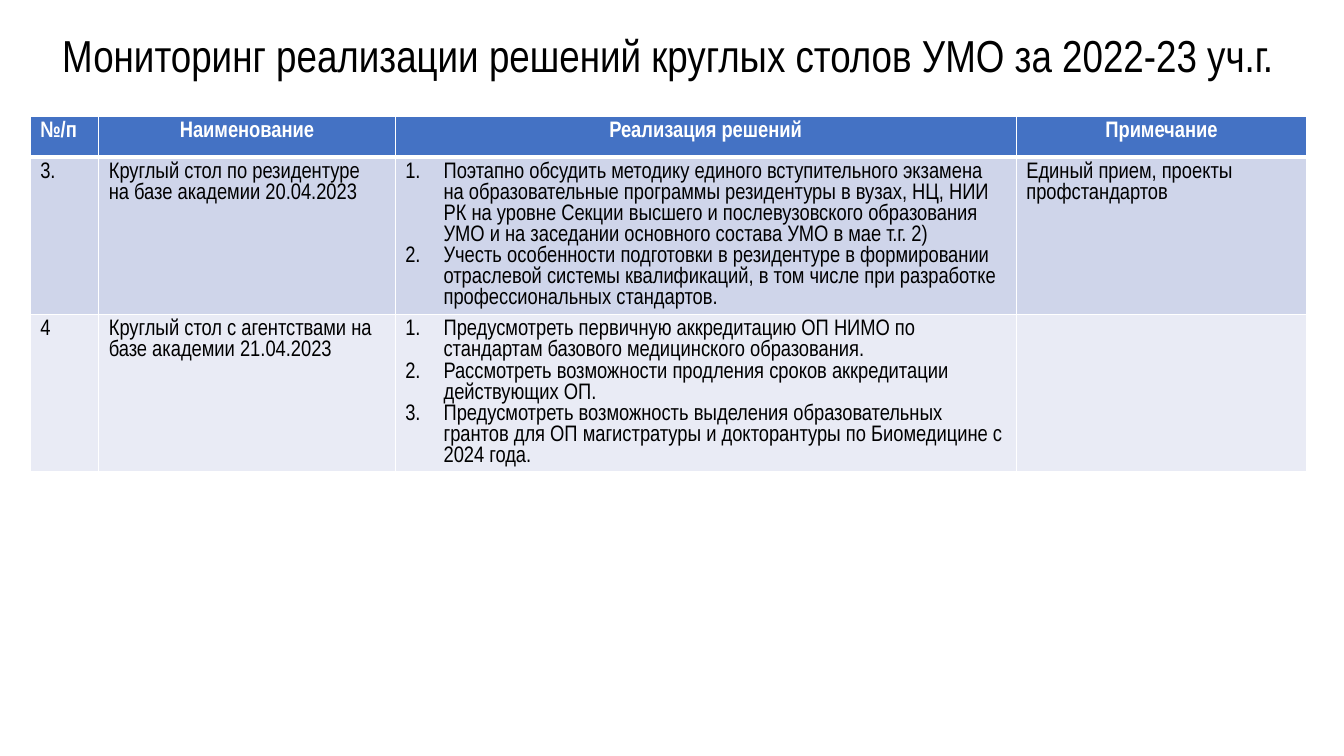
from dataclasses import dataclass

from pptx import Presentation
from pptx.dml.color import RGBColor
from pptx.enum import text
from pptx.oxml import parse_xml
from pptx.oxml.ns import nsdecls
from pptx.util import Inches, Pt

FONT = "Arial Narrow"
BLACK, WHITE = "000000", "FFFFFF"
LEFT, TABLE_TOP, WIDTH = 0.3, 1.15, 12.66
COLUMN_WIDTHS = (0.68, 2.94, 6.16, 2.88)
ROW_HEIGHT = 0.41
NUMBER_INDENT = 0.38


@dataclass
class RoundTable:
    number: str
    name: str
    decisions: tuple[str, ...]
    note: str
    fill: str


HEADERS = ("№/п", "Наименование", "Реализация решений", "Примечание")
ROUND_TABLES = (
    RoundTable(
        "3.",
        "Круглый стол по резидентуре на базе академии 20.04.2023",
        (
            "Поэтапно обсудить методику единого вступительного экзамена на "
            "образовательные программы резидентуры в вузах, НЦ, НИИ РК на уровне "
            "Секции высшего и послевузовского образования УМО и на заседании "
            "основного состава УМО в мае т.г. 2)",
            "Учесть особенности подготовки в резидентуре в формировании отраслевой "
            "системы квалификаций, в том числе при разработке профессиональных "
            "стандартов.",
        ),
        "Единый прием, проекты профстандартов",
        "CFD5EA",
    ),
    RoundTable(
        "4",
        "Круглый стол с агентствами на базе академии 21.04.2023",
        (
            "Предусмотреть первичную аккредитацию ОП НИМО по стандартам базового "
            "медицинского образования.",
            "Рассмотреть возможности продления сроков аккредитации действующих ОП.",
            "Предусмотреть возможность выделения образовательных грантов для ОП "
            "магистратуры и докторантуры по Биомедицине с 2024 года.",
        ),
        "",
        "E9EBF5",
    ),
)


def color(value: str) -> RGBColor:
    return RGBColor.from_string(value)


def add_span(para, words: str, size: float, ink: str, bold: bool = False) -> None:
    span = para.add_run()
    span.text = words
    span.font.name = FONT
    span.font.size = Pt(size)
    span.font.bold = bold
    span.font.color.rgb = color(ink)


def number_paragraph(para) -> None:
    props = para._p.get_or_add_pPr()
    props.set("marL", str(Inches(NUMBER_INDENT)))
    props.set("indent", str(-Inches(NUMBER_INDENT)))
    props.append(parse_xml(f'<a:buFont {nsdecls("a")} typeface="+mj-lt"/>'))
    props.append(parse_xml(f'<a:buAutoNum {nsdecls("a")} type="arabicPeriod"/>'))


def set_fill_and_borders(cell, fill: str, top: float, bottom: float) -> None:
    """Fill the cell and give it white borders; top and bottom are in points."""
    cell.fill.solid()
    cell.fill.fore_color.rgb = color(fill)
    props = cell._tc.get_or_add_tcPr()
    sides = {"lnL": 1, "lnR": 1, "lnT": top, "lnB": bottom}
    for place, (side, weight) in enumerate(sides.items()):
        props.insert(place, parse_xml(
            f'<a:{side} {nsdecls("a")} w="{Pt(weight)}"><a:solidFill>'
            f'<a:srgbClr val="{WHITE}"/></a:solidFill></a:{side}>'))


def write_cell(cell, lines: tuple[str, ...], ink: str, bold: bool = False,
               centred: bool = False, numbered: bool = False) -> None:
    frame = cell.text_frame
    for index, line in enumerate(lines):
        para = frame.add_paragraph() if index else frame.paragraphs[0]
        if centred:
            para.alignment = text.PP_ALIGN.CENTER
        if numbered:
            number_paragraph(para)
        if line:
            add_span(para, line, 16, ink, bold)


def add_title(page) -> None:
    title = page.shapes.title
    title.left, title.top = Inches(LEFT), Inches(0)
    title.width, title.height = Inches(WIDTH), Inches(TABLE_TOP)
    title.text_frame.vertical_anchor = text.MSO_ANCHOR.MIDDLE
    para = title.text_frame.paragraphs[0]
    para.alignment = text.PP_ALIGN.CENTER
    para.line_spacing = 0.9
    add_span(para, "Мониторинг реализации решений круглых столов УМО за 2022-23 уч.г.",
             32, BLACK)


def add_monitoring_table(page) -> None:
    row_count = len(ROUND_TABLES) + 1
    table = page.shapes.add_table(
        row_count, len(HEADERS), Inches(LEFT), Inches(TABLE_TOP),
        Inches(WIDTH), Inches(ROW_HEIGHT * row_count)).table
    for column, width in zip(table.columns, COLUMN_WIDTHS):
        column.width = Inches(width)

    for index, header in enumerate(HEADERS):
        cell = table.cell(0, index)
        set_fill_and_borders(cell, "4472C4", top=1, bottom=3)
        write_cell(cell, (header,), WHITE, bold=True, centred=index > 0)

    for row, entry in enumerate(ROUND_TABLES, start=1):
        contents = ((entry.number,), (entry.name,), entry.decisions, (entry.note,))
        for index, lines in enumerate(contents):
            cell = table.cell(row, index)
            set_fill_and_borders(cell, entry.fill, top=3 if row == 1 else 1, bottom=1)
            write_cell(cell, lines, BLACK, numbered=lines is entry.decisions)


def main() -> None:
    deck = Presentation()
    deck.slide_width, deck.slide_height = Inches(13.33), Inches(7.5)
    page = deck.slides.add_slide(deck.slide_layouts[5])
    add_title(page)
    add_monitoring_table(page)
    deck.save("out.pptx")


if __name__ == "__main__":
    main()
